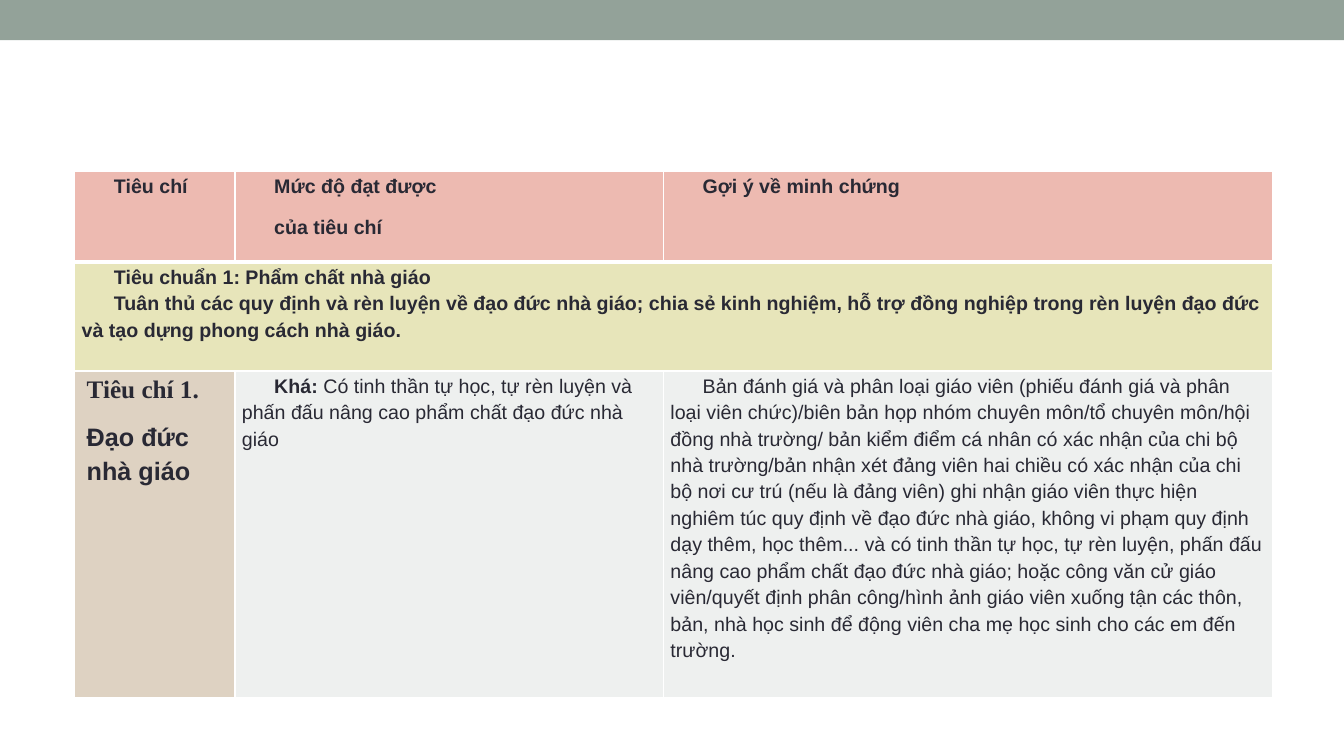
from dataclasses import dataclass

from lxml import etree
from pptx import Presentation
from pptx import util as u
from pptx.dml.color import RGBColor
from pptx.enum import shapes
from pptx.oxml import ns


@dataclass(frozen=True)
class Theme:
    band: str = "93A299"
    header: str = "EDBAB1"
    standard: str = "E7E5BA"
    criterion: str = "DED2C2"
    body: str = "EEF0EF"
    ink: str = "292934"
    border: str = "FFFFFF"
    sans: str = "Arial"
    serif: str = "Times New Roman"
    text_size: int = 14
    criterion_size: int = 18


THEME = Theme()
COLUMN_WIDTHS = (1.59, 4.25, 6.04)
ROW_HEIGHTS = (0.9, 1.08, 3.24)
FIRST_LINE = 0.32
SIDE_MARGIN = 0.07

EVIDENCE = (
    "Bản đánh giá và phân loại giáo viên (phiếu đánh giá và phân loại viên chức)/biên bản họp "
    "nhóm chuyên môn/tổ chuyên môn/hội đồng nhà trường/ bản kiểm điểm cá nhân có xác nhận của "
    "chi bộ nhà trường/bản nhận xét đảng viên hai chiều có xác nhận của chi bộ nơi cư trú (nếu "
    "là đảng viên) ghi nhận giáo viên thực hiện nghiêm túc quy định về đạo đức nhà giáo, không "
    "vi phạm quy định dạy thêm, học thêm... và có tinh thần tự học, tự rèn luyện, phấn đấu nâng "
    "cao phẩm chất đạo đức nhà giáo; hoặc công văn cử giáo viên/quyết định phân công/hình ảnh "
    "giáo viên xuống tận các thôn, bản, nhà học sinh để động viên cha mẹ học sinh cho các em "
    "đến trường."
)


def apply_format(target, values):
    for name, value in values.items():
        setattr(target, name, value)


def paint(fill, colour):
    fill.solid()
    fill.fore_color.rgb = RGBColor.from_string(colour)


def add_run(paragraph, text, bold=True, size=THEME.text_size, font=THEME.sans):
    run = paragraph.add_run()
    run.text = text
    apply_format(run.font, {"name": font, "size": u.Pt(size), "bold": bold})
    run.font.color.rgb = RGBColor.from_string(THEME.ink)


def set_border(cell, side, width):
    properties = cell._tc.get_or_add_tcPr()
    line = etree.SubElement(properties, ns.qn(f"a:ln{side}"), w=str(u.Pt(width)))
    fill = etree.SubElement(line, ns.qn("a:solidFill"))
    etree.SubElement(fill, ns.qn("a:srgbClr"), val=THEME.border)


def fill_cell(cell, colour, paragraphs, space_after=10, indent=FIRST_LINE, margin=SIDE_MARGIN):
    """Each paragraph is a list of (text, run format) pairs."""
    apply_format(cell, {
        "margin_left": u.Inches(margin), "margin_right": u.Inches(margin),
        "margin_top": 0, "margin_bottom": 0,
    })
    paint(cell.fill, colour)
    frame = cell.text_frame
    for index, runs in enumerate(paragraphs):
        paragraph = frame.add_paragraph() if index else frame.paragraphs[0]
        apply_format(paragraph, {
            "line_spacing": 1.2, "space_before": u.Pt(0), "space_after": u.Pt(space_after),
        })
        properties = paragraph._p.get_or_add_pPr()
        properties.set("marL", "0")
        properties.set("indent", str(u.Inches(indent)))
        for text, run_format in runs:
            add_run(paragraph, text, **run_format)


def add_band(slide, width):
    band = slide.shapes.add_shape(shapes.MSO_SHAPE.RECTANGLE, 0, 0, width, u.Inches(0.4))
    band.shadow.inherit = False
    paint(band.fill, THEME.band)
    band.line.fill.background()


def add_grid(slide):
    table = slide.shapes.add_table(
        len(ROW_HEIGHTS), len(COLUMN_WIDTHS), u.Inches(0.74), u.Inches(1.7),
        u.Inches(sum(COLUMN_WIDTHS)), u.Inches(sum(ROW_HEIGHTS))).table
    table.horz_banding = False
    for column, width in zip(table.columns, COLUMN_WIDTHS):
        column.width = u.Inches(width)
    for index, (row, height) in enumerate(zip(table.rows, ROW_HEIGHTS)):
        row.height = u.Inches(height)
        # The rule under the header row is heavier than the others
        widths = {"L": 1, "R": 1, "T": 3 if index == 1 else 1, "B": 3 if index == 0 else 1}
        for cell in row.cells:
            for side, width in widths.items():
                set_border(cell, side, width)
    return table


def main():
    presentation = Presentation()
    presentation.slide_width = u.Inches(13.33)
    presentation.slide_height = u.Inches(7.5)
    slide = presentation.slides.add_slide(presentation.slide_layouts[6])
    add_band(slide, presentation.slide_width)
    table = add_grid(slide)

    # Header row
    headings = (["Tiêu chí"], ["Mức độ đạt được", "của tiêu chí"], ["Gợi ý về minh chứng"])
    for column, lines in enumerate(headings):
        fill_cell(table.cell(0, column), THEME.header, [[(line, {})] for line in lines])

    # Standard, across all columns
    table.cell(1, 0).merge(table.cell(1, 2))
    fill_cell(table.cell(1, 0), THEME.standard, [
        [("Tiêu chuẩn 1: Phẩm chất nhà giáo", {})],
        [("Tuân thủ các quy định và rèn luyện về đạo đức nhà giáo; chia sẻ kinh nghiệm, hỗ trợ "
          "đồng nghiệp trong rèn luyện đạo đức và tạo dựng phong cách nhà giáo.", {})],
    ], space_after=0)

    # Criterion, level reached and evidence
    fill_cell(table.cell(2, 0), THEME.criterion, [
        [("Tiêu chí 1.", {"size": THEME.criterion_size, "font": THEME.serif})],
        [("Đạo đức nhà giáo", {"size": THEME.criterion_size})],
    ], indent=0, margin=0.12)
    fill_cell(table.cell(2, 1), THEME.body, [[
        ("Khá:", {}),
        (" Có tinh thần tự học, tự rèn luyện và phấn đấu nâng cao phẩm chất đạo đức nhà giáo",
         {"bold": False}),
    ]])
    fill_cell(table.cell(2, 2), THEME.body, [[(EVIDENCE, {"bold": False})]], space_after=0)

    presentation.save("out.pptx")


if __name__ == "__main__":
    main()
